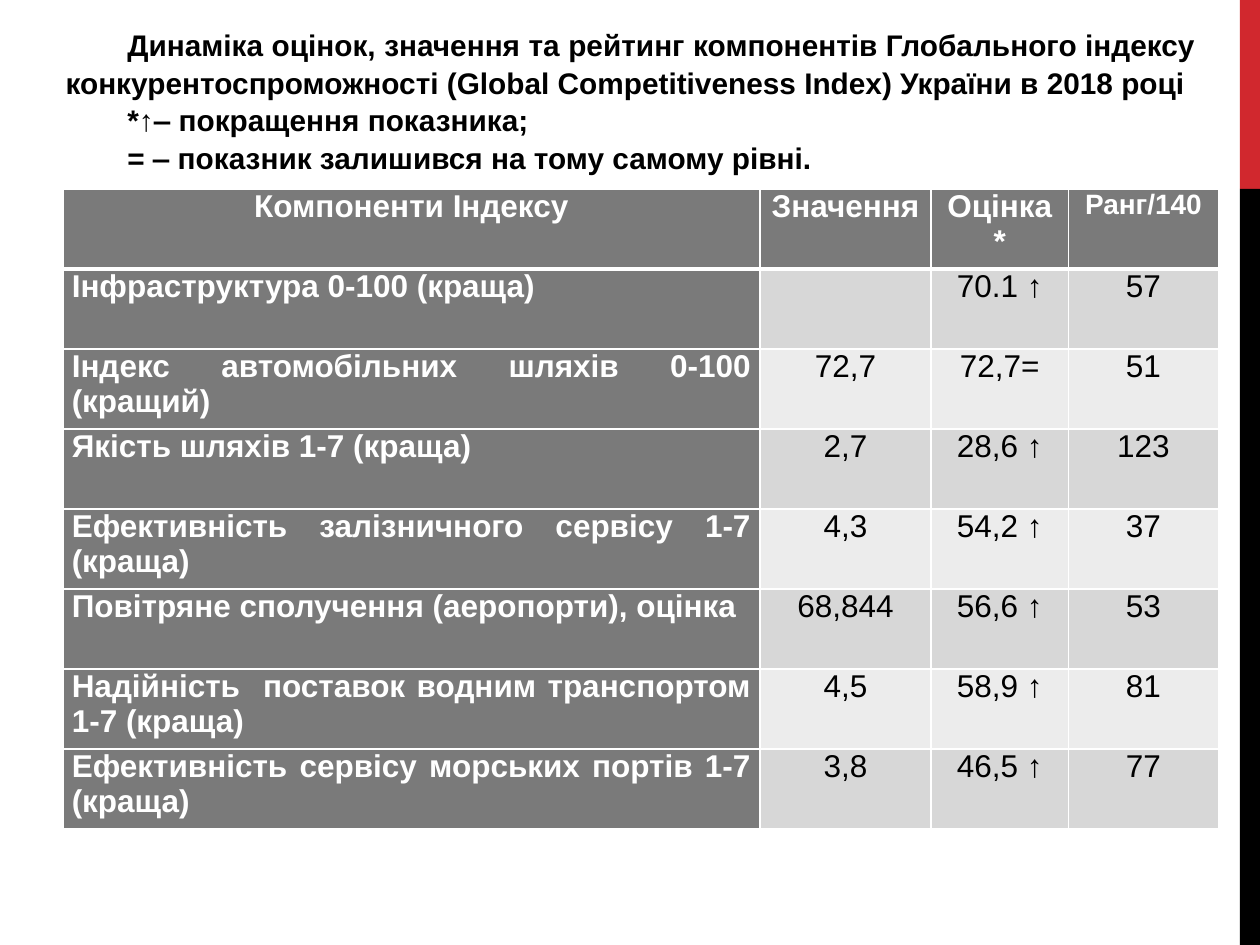
from lxml.etree import SubElement
from pptx import Presentation
from pptx.dml.color import RGBColor
from pptx.enum.shapes import MSO_SHAPE
from pptx.enum.text import MSO_ANCHOR, MSO_AUTO_SIZE, PP_ALIGN
from pptx.oxml.ns import qn
from pptx.util import Inches, Pt

TITLE = [
    "Динаміка оцінок, значення та рейтинг компонентів Глобального індексу "
    "конкурентоспроможності (Global Competitiveness Index) України в 2018 році ",
    "*↑‒ покращення показника; ",
    "= ‒ показник залишився на тому самому рівні.",
]
HEADS = ["Компоненти Індексу", "Значення", "Оцінка *", "Ранг/140"]
ROWS = [
    ["Інфраструктура 0-100 (краща)", "", "70.1 ↑", "57"],
    ["Індекс автомобільних шляхів 0-100 (кращий)", "72,7", "72,7=", "51"],
    ["Якість шляхів 1-7 (краща)", "2,7", "28,6 ↑", "123"],
    ["Ефективність залізничного сервісу 1-7 (краща) ", "4,3", "54,2 ↑", "37"],
    ["Повітряне сполучення (аеропорти), оцінка", "68,844", "56,6 ↑", "53"],
    ["Надійність  поставок водним транспортом 1-7 (краща) ", "4,5", "58,9 ↑", "81"],
    ["Ефективність сервісу морських портів 1-7 (краща)", "3,8", "46,5 ↑", "77"],
]
WIDTHS = [5.53, 1.36, 1.09, 1.19]
WHITE, BLACK, RED, GREY = "FFFFFF", "000000", "D1282E", "7A7A7A"
BANDS = ["D7D7D7", "ECECEC"]


def paint(fill, tone):
    """Fill with a solid hex colour."""
    fill.solid()
    fill.fore_color.rgb = RGBColor.from_string(tone)


def assign(item, values):
    """Set every attribute named in a dict."""
    for name, value in values.items():
        setattr(item, name, value)


def write(para, text, size, tone, bold, align):
    """Put one styled run into a paragraph."""
    para.alignment = align
    run = para.add_run()
    run.text = text
    assign(run.font, {"name": "Arial", "size": Pt(size), "bold": bold})
    paint(run.font.fill, tone)


def add_bar(slide, top, height, tone):
    """Draw one block of the strip on the right edge."""
    bar = slide.shapes.add_shape(
        MSO_SHAPE.RECTANGLE, Inches(9.84), Inches(top), Inches(0.16), Inches(height))
    bar.shadow.inherit = False
    paint(bar.fill, tone)
    bar.line.fill.background()


def add_title(slide):
    """Fill the title placeholder with indented lines."""
    title = slide.shapes.title
    assign(title, {"left": Inches(0.42), "top": Inches(0.17),
                   "width": Inches(9.17), "height": Inches(1.25)})
    frame = title.text_frame
    assign(frame, {"word_wrap": True, "auto_size": MSO_AUTO_SIZE.NONE,
                   "vertical_anchor": MSO_ANCHOR.MIDDLE})
    for i, text in enumerate(TITLE):
        para = frame.add_paragraph() if i else frame.paragraphs[0]
        write(para, text, 17, BLACK, True, PP_ALIGN.JUSTIFY)
        para.line_spacing = 1.05
        para._p.get_or_add_pPr().set("indent", str(Inches(0.49)))


def edge(cell, side, width):
    """Add a white border to one side of a cell."""
    line = SubElement(cell._tc.get_or_add_tcPr(), qn(f"a:ln{side}"), w=str(Pt(width)))
    fill = SubElement(line, qn("a:solidFill"))
    SubElement(fill, qn("a:srgbClr"), val=WHITE)


def fill_cell(cell, text, row, col):
    """Style a cell by its row and column."""
    head = row == 0
    strong = head or col == 0
    assign(cell, {"margin_left": Inches(0.07), "margin_right": Inches(0.07),
                  "margin_top": 0, "margin_bottom": 0})
    rules = {"L": 1, "R": 1, "T": 3 if row == 1 else 1, "B": 3 if head else 1}
    for side, width in rules.items():
        edge(cell, side, width)
    paint(cell.fill, GREY if strong else BANDS[(row - 1) % 2])
    if text:
        size = 16 if head and col == 3 else 18
        align = PP_ALIGN.JUSTIFY if col == 0 and not head else PP_ALIGN.CENTER
        write(cell.text_frame.paragraphs[0], text, size,
              WHITE if strong else BLACK, strong, align)


def add_grid(slide):
    """Build the table of index components."""
    data = [HEADS] + ROWS
    table = slide.shapes.add_table(
        len(data), len(HEADS), Inches(0.5), Inches(1.5), Inches(9.17), Inches(5.08)).table
    for col, width in zip(table.columns, WIDTHS):
        col.width = Inches(width)
    for r, texts in enumerate(data):
        for c, text in enumerate(texts):
            fill_cell(table.cell(r, c), text, r, c)


def main():
    """Build and save the slide."""
    deck = Presentation()
    assign(deck, {"slide_width": Inches(10), "slide_height": Inches(7.5)})
    slide = deck.slides.add_slide(deck.slide_layouts[5])
    add_bar(slide, 0, 1.5, RED)
    add_bar(slide, 1.5, 6, BLACK)
    add_grid(slide)
    add_title(slide)
    deck.save("out.pptx")


if __name__ == "__main__":
    main()
